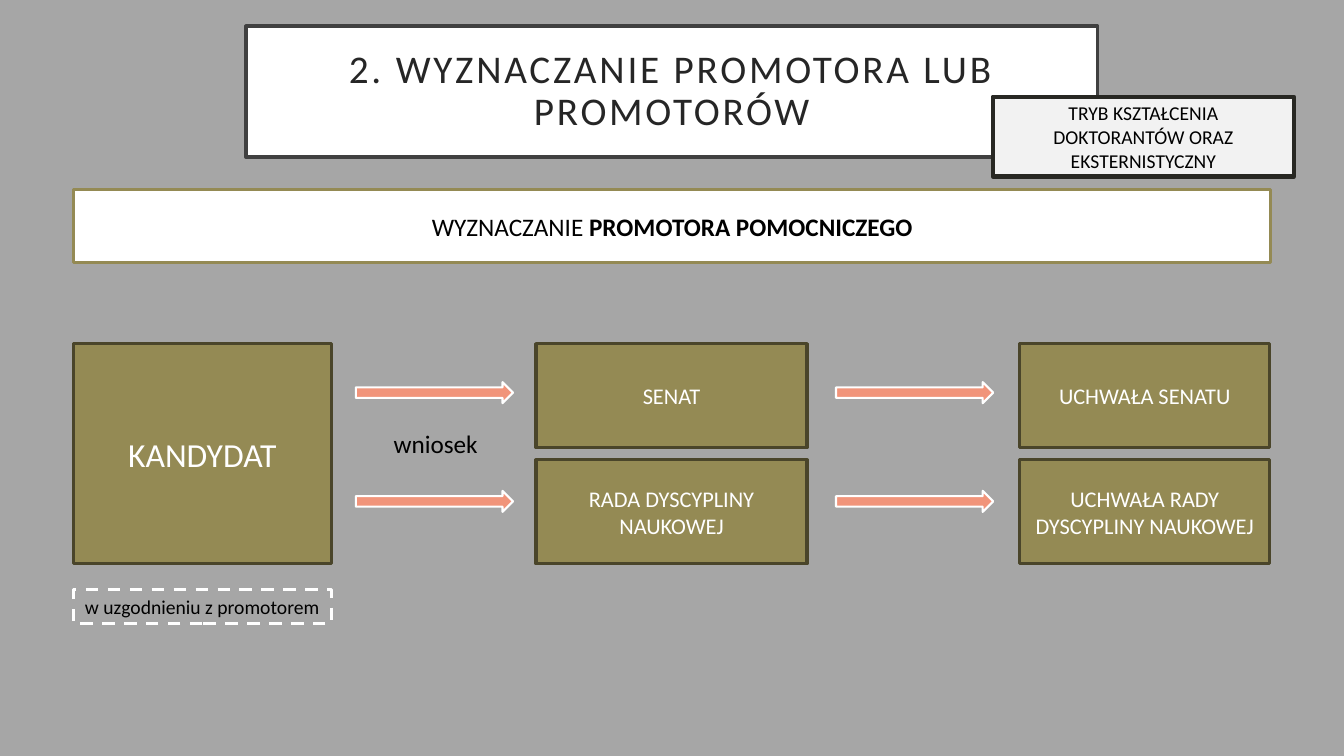
from dataclasses import dataclass

from pptx import Presentation, util as u
from pptx.dml.color import RGBColor
from pptx.enum import dml, shapes, text
from pptx.oxml.ns import qn


@dataclass(frozen=True)
class Theme:
    font: str = "Calibri"
    background: str = "A6A6A6"
    white: str = "FFFFFF"
    black: str = "000000"
    olive: str = "948A54"
    olive_dark: str = "4A452A"
    salmon: str = "F1947A"
    title_text: str = "262626"
    title_line: str = "404040"
    tag_fill: str = "F2F2F2"
    tag_line: str = "282823"
    title: float = 28
    actor: float = 24
    heading: float = 18
    step: float = 16
    note: float = 14


theme = Theme()


def paint(shape, fill, line, width):
    if fill:
        shape.fill.solid()
        shape.fill.fore_color.rgb = RGBColor.from_string(fill)
    else:
        shape.fill.background()
    shape.line.color.rgb = RGBColor.from_string(line)
    shape.line.width = u.Pt(width)
    shape.shadow.inherit = False


def write(shape, paragraphs, size, color, align=text.PP_ALIGN.CENTER):
    frame = shape.text_frame
    frame.text = "\n".join(paragraphs)
    frame.word_wrap = True
    for paragraph in frame.paragraphs:
        paragraph.alignment = align
        paragraph.font.name = theme.font
        paragraph.font.size = u.Pt(size)
        paragraph.font.color.rgb = RGBColor.from_string(color)
    return frame


prs = Presentation()
prs.slide_width, prs.slide_height = u.Cm(33.87), u.Cm(19.05)
slide = prs.slides.add_slide(prs.slide_layouts[5])
slide.background.fill.solid()
slide.background.fill.fore_color.rgb = RGBColor.from_string(theme.background)

title = slide.shapes.title
title.left, title.top, title.width, title.height = u.Cm(6.2), u.Cm(0.66), u.Cm(21.46), u.Cm(3.3)
paint(title, theme.white, theme.title_line, 2.5)
title_frame = write(title, ["2. WYZNACZANIE PROMOTORA LUB PROMOTORÓW"], theme.title, theme.title_text)
title_frame.auto_size = text.MSO_AUTO_SIZE.NONE
title_frame.vertical_anchor = text.MSO_ANCHOR.MIDDLE
title_frame.margin_left = title_frame.margin_right = u.Cm(0.51)
title_frame.margin_top = title_frame.margin_bottom = u.Cm(0.51)
title_frame.paragraphs[0].line_spacing = 0.9
title_frame.paragraphs[0].runs[0].font.bold = False
for run_properties in title.element.iter(qn("a:rPr")):
    run_properties.set("spc", "200")

left, top, row_step, step_height = 1.85, 8.66, 2.93, 2.62

heading = slide.shapes.add_shape(
    shapes.MSO_SHAPE.RECTANGLE, u.Cm(left), u.Cm(4.78), u.Cm(30.18), u.Cm(1.83))
paint(heading, theme.white, theme.olive, 2.25)
heading_frame = write(heading, ["WYZNACZANIE "], theme.heading, theme.black)
role = heading_frame.paragraphs[0].add_run()
role.text = "PROMOTORA POMOCNICZEGO"
role.font.bold = True

mode = slide.shapes.add_shape(
    shapes.MSO_SHAPE.RECTANGLE, u.Cm(25.02), u.Cm(2.44), u.Cm(7.59), u.Cm(2.01))
paint(mode, theme.tag_fill, theme.tag_line, 3)
write(mode, ["TRYB KSZTAŁCENIA DOKTORANTÓW ORAZ", "EKSTERNISTYCZNY"], theme.note, theme.black)

steps = [("KANDYDAT", left, top, 6.5, row_step + step_height, theme.actor)]
for column_left, width, labels in (
    (13.51, 6.83, ("SENAT", "RADA DYSCYPLINY NAUKOWEJ")),
    (25.7, 6.3, ("UCHWAŁA SENATU", "UCHWAŁA RADY DYSCYPLINY NAUKOWEJ")),
):
    for row, label in enumerate(labels):
        steps.append((label, column_left, top + row * row_step, width, step_height, theme.step))

for label, x, y, width, height, size in steps:
    step = slide.shapes.add_shape(
        shapes.MSO_SHAPE.RECTANGLE, u.Cm(x), u.Cm(y), u.Cm(width), u.Cm(height))
    paint(step, theme.olive, theme.olive_dark, 2.25)
    write(step, [label], size, theme.white)

for x in (8.97, 21.07):
    for y in (9.63, 12.37):
        arrow = slide.shapes.add_shape(
            shapes.MSO_SHAPE.RIGHT_ARROW, u.Cm(x), u.Cm(y), u.Cm(3.96), u.Cm(0.53))
        paint(arrow, theme.salmon, theme.white, 1.5)

agreement = slide.shapes.add_shape(
    shapes.MSO_SHAPE.RECTANGLE, u.Cm(left), u.Cm(14.86), u.Cm(6.5), u.Cm(0.86))
paint(agreement, None, theme.white, 2.25)
agreement.line.dash_style = dml.MSO_LINE.DASH
agreement_frame = write(agreement, ["w uzgodnieniu z promotorem"], theme.note, theme.black)
agreement_frame.vertical_anchor = text.MSO_ANCHOR.TOP
agreement_frame.auto_size = text.MSO_AUTO_SIZE.SHAPE_TO_FIT_TEXT

application = slide.shapes.add_textbox(u.Cm(9.55), u.Cm(10.67), u.Cm(2.74), u.Cm(1.02))
application_frame = write(application, ["wniosek"], theme.heading, theme.black, text.PP_ALIGN.RIGHT)
application_frame.auto_size = text.MSO_AUTO_SIZE.SHAPE_TO_FIT_TEXT

prs.save("out.pptx")
